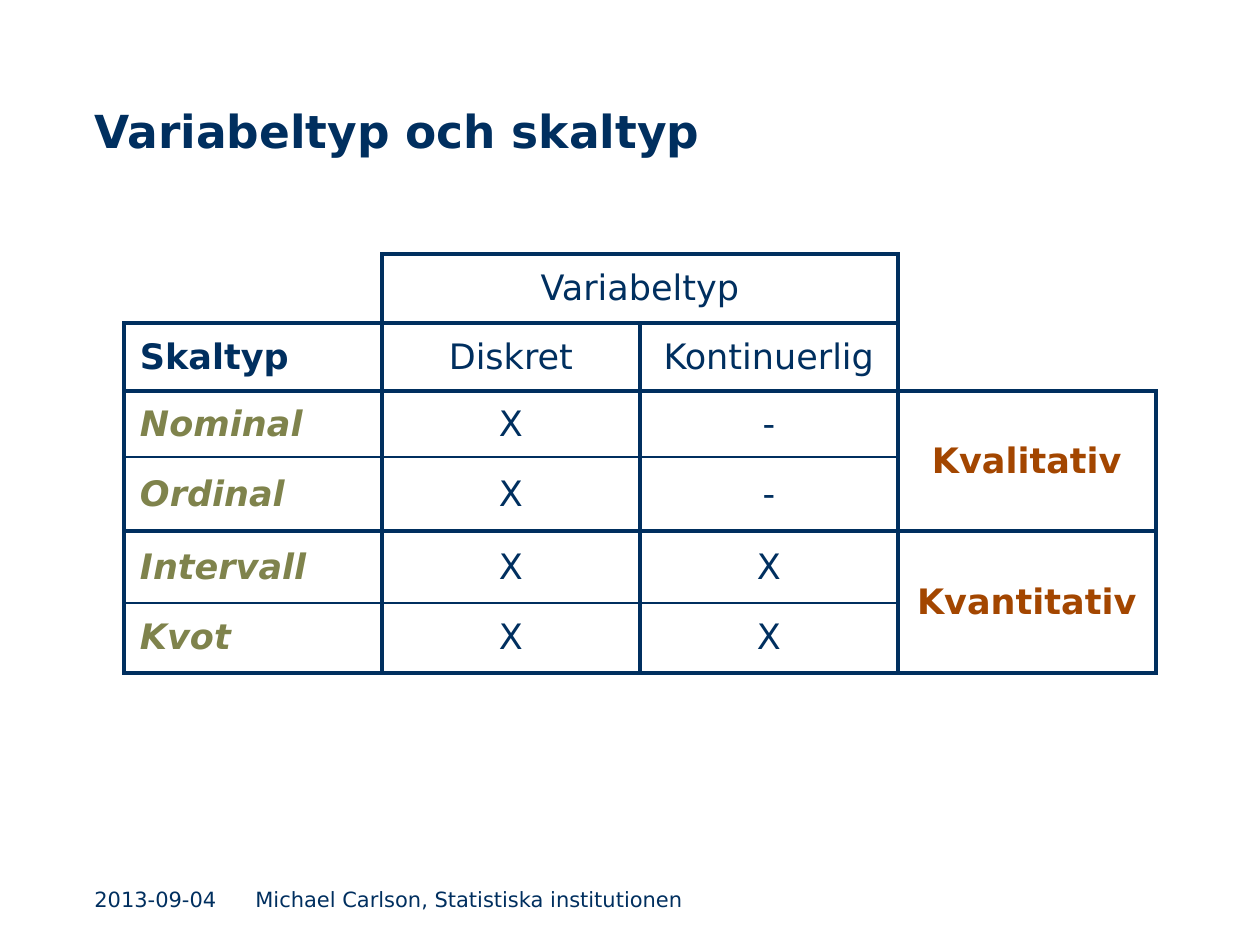
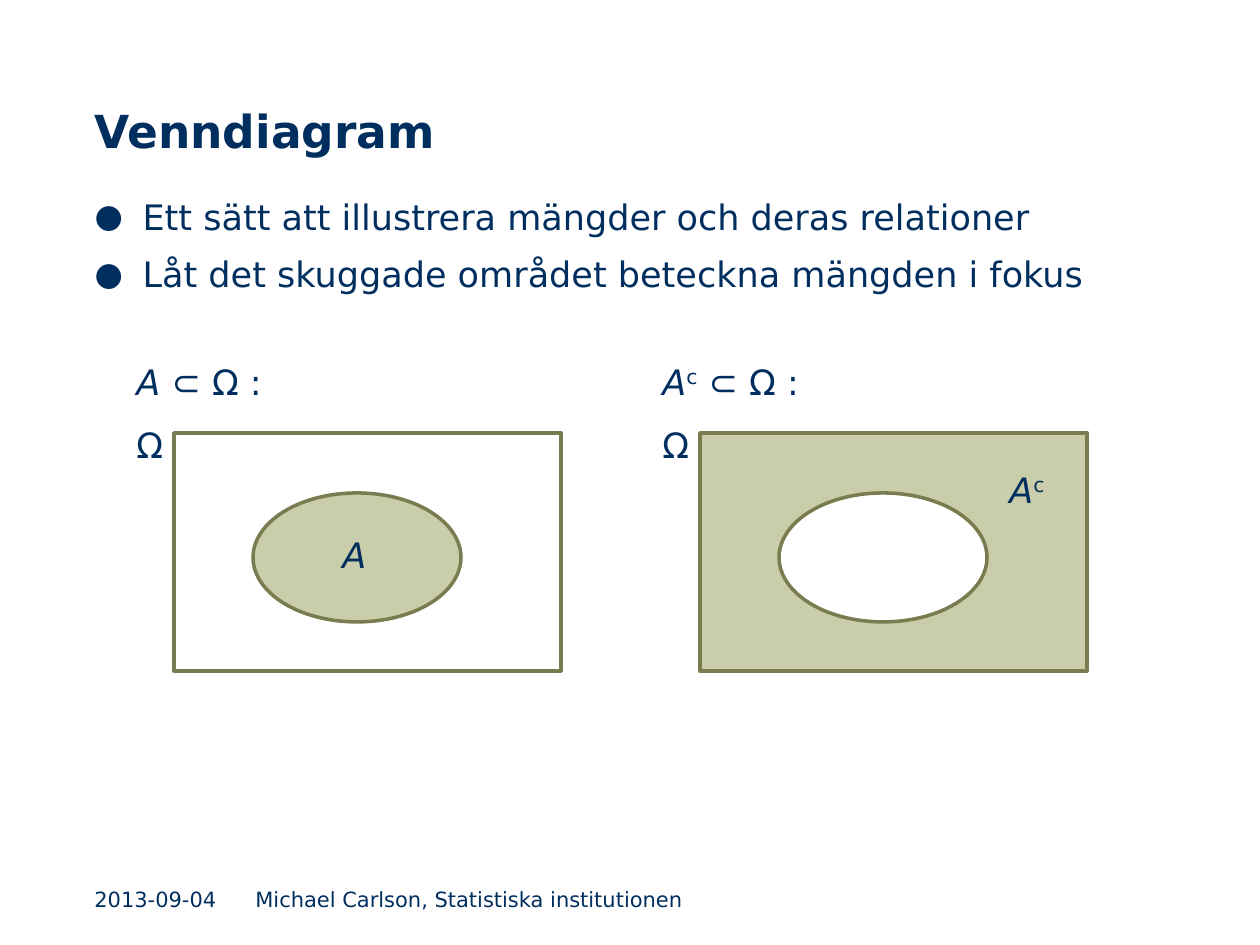
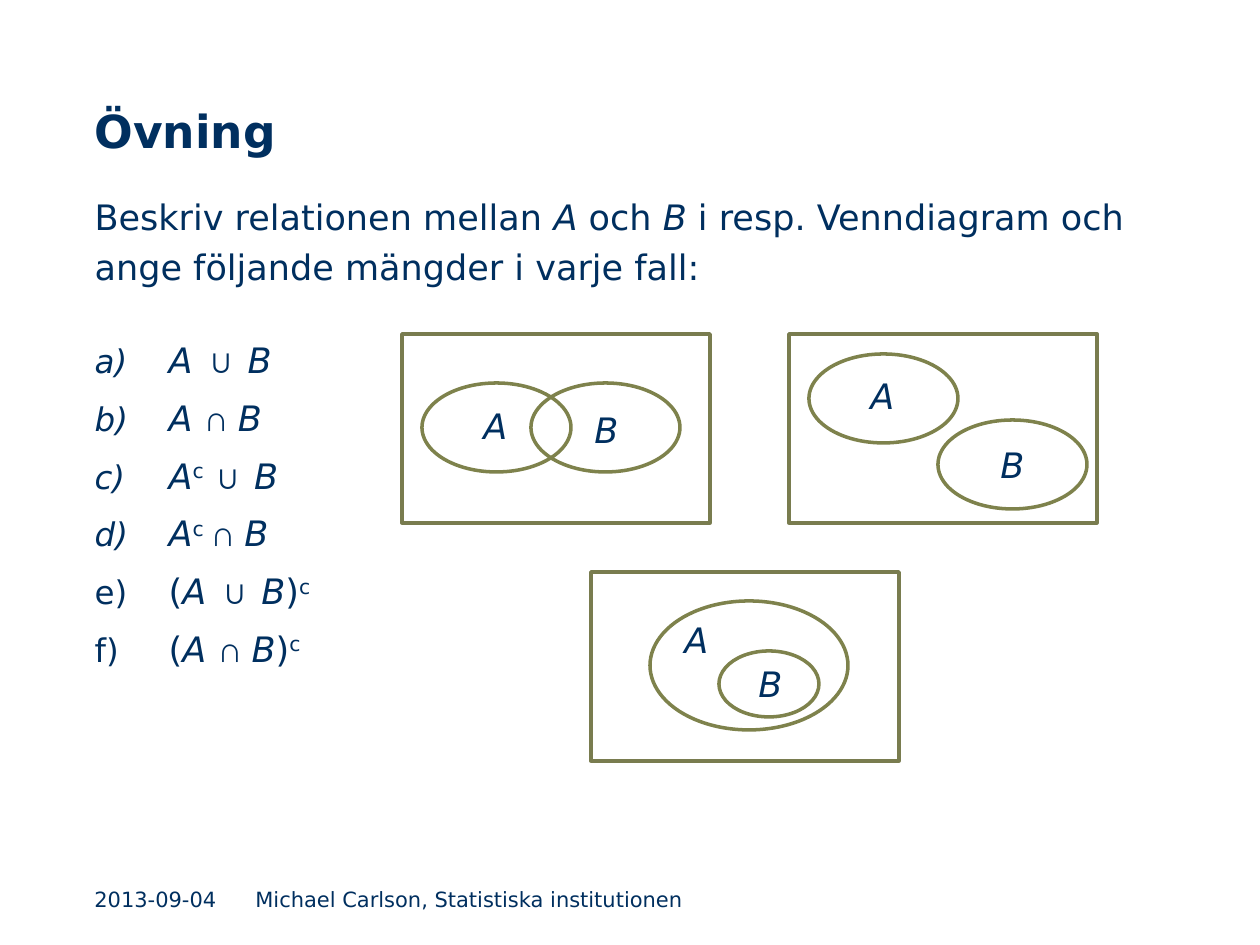
from lxml.etree import SubElement
from pptx import Presentation
from pptx.dml.color import RGBColor
from pptx.enum.shapes import MSO_SHAPE
from pptx.enum.text import MSO_ANCHOR, MSO_AUTO_SIZE, PP_ALIGN
from pptx.oxml.ns import qn
from pptx.util import Pt

SCALE = 914400 / 126
COLORS = {
    "navy": "002F5F",
    "olive": "7F834C",
    "rust": "A34600",
    "frame": "797C4F",
    "outline": "7E824C",
    "shade": "CACDA9",
    "white": "FFFFFF",
}
FONT = "DejaVu Sans"
SYMBOL_FONT = "Times New Roman"


def px(*lengths):
    return [round(length * SCALE) for length in lengths]


def add_runs(paragraph, runs, size=20, color="navy"):
    for text, style in runs:
        run = paragraph.add_run()
        run.text = text
        run.font.name = SYMBOL_FONT if "symbol" in style else FONT
        run.font.size = Pt(size)
        run.font.bold = "bold" in style
        run.font.italic = "italic" in style
        run.font.color.rgb = RGBColor.from_string(COLORS[color])
        if "raised" in style:
            run._r.get_or_add_rPr().set("baseline", "30000")


presentation = Presentation()
presentation.slide_width, presentation.slide_height = px(1260, 945)
title_only = presentation.slide_layouts[5]
title_and_body = presentation.slide_layouts[1]
table_slide = presentation.slides.add_slide(title_only)
venn_slide = presentation.slides.add_slide(title_and_body)
exercise_slide = presentation.slides.add_slide(title_and_body)

titles = [
    (table_slide, "Variabeltyp och skaltyp"),
    (venn_slide, "Venndiagram"),
    (exercise_slide, "Övning"),
]
labels = []
for slide, text in titles:
    title = slide.shapes.title
    title.left, title.top, title.width, title.height = px(82, 54, 1095, 110)
    title.text_frame.vertical_anchor = MSO_ANCHOR.BOTTOM
    title.text_frame.auto_size = MSO_AUTO_SIZE.NONE
    title_paragraph = title.text_frame.paragraphs[0]
    title_paragraph.alignment = PP_ALIGN.LEFT
    add_runs(title_paragraph, [(text, "bold")], size=26)
    for left, width, footer in [
        (82, 155, "2013-09-04"),
        (243, 619, "Michael Carlson, Statistiska institutionen"),
    ]:
        box = slide.shapes.add_textbox(*px(left, 880, width, 39))
        box.text_frame.word_wrap = True
        box.text_frame.vertical_anchor = MSO_ANCHOR.MIDDLE
        add_runs(box.text_frame.paragraphs[0], [(footer, "")], size=12)

table_rows = [
    [None, "Variabeltyp", None, None],
    ["Skaltyp", "Diskret", "Kontinuerlig", None],
    ["Nominal", "X", "-", "Kvalitativ"],
    ["Ordinal", "X", "-", None],
    ["Intervall", "X", "X", "Kvantitativ"],
    ["Kvot", "X", "X", None],
]
row_heights = [69, 68, 66, 74, 72, 70]
open_corners = {(0, 0): "RB", (0, 3): "L", (1, 3): "LB"}
thin_edges = {(2, "B"), (3, "T"), (4, "B"), (5, "T")}

table = table_slide.shapes.add_table(
    6, 4, *px(124, 254, 4 * 258, sum(row_heights))
).table
table.first_row = False
table.horz_banding = False
for column in table.columns:
    column.width = px(258)[0]
for row, height in zip(table.rows, row_heights):
    row.height = px(height)[0]
table.cell(0, 1).merge(table.cell(0, 2))
table.cell(2, 3).merge(table.cell(3, 3))
table.cell(4, 3).merge(table.cell(5, 3))

for row_index, row_texts in enumerate(table_rows):
    for column_index, text in enumerate(row_texts):
        cell = table.cell(row_index, column_index)
        cell.margin_left, cell.margin_right, cell.margin_top, cell.margin_bottom = px(16, 16, 5, 5)
        cell.vertical_anchor = MSO_ANCHOR.MIDDLE
        ruled_sides = open_corners.get((row_index, column_index), "LRTB")
        for side in "LRTB":
            border = SubElement(cell._tc.get_or_add_tcPr(), qn(f"a:ln{side}"))
            if side not in ruled_sides:
                SubElement(border, qn("a:noFill"))
                continue
            thin = (row_index, side) in thin_edges and column_index < 3
            border.set("w", str(Pt(1 if thin else 2.25)))
            fill = SubElement(border, qn("a:solidFill"))
            SubElement(fill, qn("a:srgbClr")).set("val", COLORS["navy"])
        cell.fill.background()
        if text is None:
            continue
        color, style = "navy", ""
        if column_index == 3:
            color, style = "rust", "bold"
        elif column_index == 0:
            color, style = ("navy", "bold") if row_index == 1 else ("olive", "bold italic")
        paragraph = cell.text_frame.paragraphs[0]
        paragraph.alignment = PP_ALIGN.CENTER if column_index else PP_ALIGN.LEFT
        add_runs(paragraph, [(text, style)], color=color)

SET_A = ("A", "italic")
SET_B = ("B", "italic")
A_SPACED = ("A ", "italic")
UNION = ("∪ ", "symbol")
INTERSECTION = ("∩ ", "symbol")
RAISED_C = ("c", "raised")
RAISED_C_SPACED = ("c ", "raised")

bullets = [
    [("Ett sätt att illustrera mängder och deras relationer", "")],
    [("Låt det skuggade området beteckna mängden i fokus", "")],
]
instruction = [
    ("Beskriv relationen mellan ", ""),
    SET_A,
    (" och ", ""),
    SET_B,
    (" i resp. Venndiagram och ange följande mängder i varje fall:", ""),
]
formulas = [
    [A_SPACED, UNION, SET_B],
    [A_SPACED, INTERSECTION, SET_B],
    [SET_A, RAISED_C_SPACED, UNION, SET_B],
    [SET_A, RAISED_C_SPACED, INTERSECTION, SET_B],
    [("(", ""), A_SPACED, UNION, SET_B, (")", ""), RAISED_C],
    [("(", ""), A_SPACED, INTERSECTION, SET_B, (")", ""), RAISED_C],
]
bodies = [
    (venn_slide, [("buChar", 48, 4, runs) for runs in bullets]),
    (
        exercise_slide,
        [("buNone", 0, 0, instruction)]
        + [("buAutoNum", 74, 4 if index else 24, runs) for index, runs in enumerate(formulas)],
    ),
]
marker_attributes = {
    "buChar": {"char": "●"},
    "buAutoNum": {"type": "alphaLcParenR"},
    "buNone": {},
}
for slide, items in bodies:
    body = slide.placeholders[1]
    body.left, body.top, body.width, body.height = px(82, 180, 1095, 595)
    body.text_frame.auto_size = MSO_AUTO_SIZE.NONE
    for index, (marker, indent, space_before, runs) in enumerate(items):
        paragraph = body.text_frame.add_paragraph() if index else body.text_frame.paragraphs[0]
        paragraph.line_spacing = Pt(29)
        paragraph.space_before = Pt(space_before if index else 0)
        properties = paragraph._p.get_or_add_pPr()
        properties.set("marL", str(px(indent)[0]))
        properties.set("indent", str(-px(indent)[0]))
        if marker != "buNone":
            SubElement(properties, qn("a:buSzPct")).set("val", "93000")
            SubElement(properties, qn("a:buFont")).set("typeface", FONT)
        SubElement(properties, qn(f"a:{marker}"), marker_attributes[marker])
        add_runs(paragraph, runs)

RECTANGLE, ELLIPSE = MSO_SHAPE.RECTANGLE, MSO_SHAPE.OVAL
figures = []
for left, frame_fill, set_fill, name in [
    (174, None, "shade", [SET_A]),
    (700, "shade", "white", [SET_A, RAISED_C]),
]:
    figures += [
        (venn_slide, RECTANGLE, (left, 433, 387, 238), frame_fill, "frame"),
        (venn_slide, ELLIPSE, (left + 79, 493, 208, 129), set_fill, "frame"),
    ]
    labels += [
        (venn_slide, (left - 50, 417, 54, 55), [("Ω", "")]),
        (venn_slide, (left - 50, 354, 159 if set_fill == "shade" else 170, 55), name + [(" ⊂ Ω :", "")]),
    ]
labels += [
    (venn_slide, (330, 527, 49, 55), [SET_A]),
    (venn_slide, (997, 462, 62, 55), [SET_A, RAISED_C]),
]

exercise_diagrams = [
    ((402, 334), (422, 383, 149, 89), (531, 383, 149, 89), (471, 398), (582, 402)),
    ((789, 334), (809, 354, 149, 89), (938, 420, 149, 89), (858, 368), (988, 437)),
    ((591, 572), (650, 601, 198, 129), (719, 651, 100, 66), (672, 612), (746, 656)),
]
for frame, ellipse_a, ellipse_b, label_a, label_b in exercise_diagrams:
    figures += [
        (exercise_slide, RECTANGLE, (*frame, 308, 189), None, "frame"),
        (exercise_slide, ELLIPSE, ellipse_a, None, "outline"),
        (exercise_slide, ELLIPSE, ellipse_b, None, "outline"),
    ]
    labels += [
        (exercise_slide, (*label_a, 49, 55), [SET_A]),
        (exercise_slide, (*label_b, 49, 55), [SET_B]),
    ]

for slide, kind, bounds, fill, line in figures:
    shape = slide.shapes.add_shape(kind, *px(*bounds))
    shape.shadow.inherit = False
    shape.line.color.rgb = RGBColor.from_string(COLORS[line])
    shape.line.width = Pt(2)
    if fill:
        shape.fill.solid()
        shape.fill.fore_color.rgb = RGBColor.from_string(COLORS[fill])
    else:
        shape.fill.background()

for slide, bounds, runs in labels:
    box = slide.shapes.add_textbox(*px(*bounds))
    box.text_frame.word_wrap = False
    box.text_frame.auto_size = MSO_AUTO_SIZE.SHAPE_TO_FIT_TEXT
    add_runs(box.text_frame.paragraphs[0], runs)

presentation.save("out.pptx")
